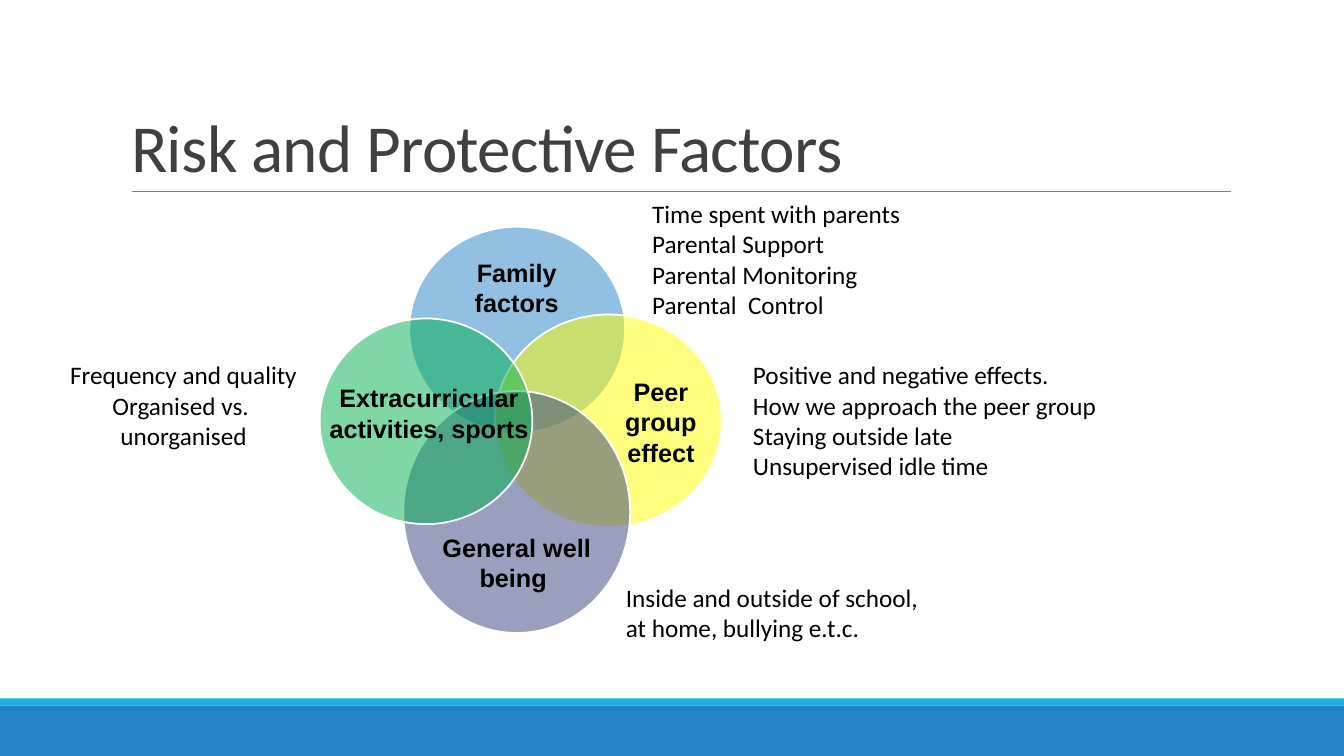
import pptx
import pptx.util
import pptx.oxml
import pptx.oxml.ns
import pptx.dml.color
import pptx.enum.shapes
import pptx.enum.text

Inches = pptx.util.Inches
Pt = pptx.util.Pt
RGBColor = pptx.dml.color.RGBColor
MSO_SHAPE = pptx.enum.shapes.MSO_SHAPE
ANCHOR = pptx.enum.text.MSO_ANCHOR
ALIGN = pptx.enum.text.PP_ALIGN

BLUE = RGBColor(0x26, 0x83, 0xC6)
CYAN = RGBColor(0x1C, 0xAD, 0xE4)
YELLOW = RGBColor(0xFF, 0xFF, 0x00)
INDIGO = RGBColor(0x34, 0x40, 0x7C)
GREEN = RGBColor(0x00, 0xB0, 0x50)
GREY = RGBColor(0x80, 0x80, 0x80)
DARK = RGBColor(0x40, 0x40, 0x40)
BLACK = RGBColor(0, 0, 0)
WHITE = RGBColor(0xFF, 0xFF, 0xFF)

CIRCLES = [
    ((0.89, 0, 2.14, 2.04), BLUE, (1.13, 0.28, 1.65, 0.65), "Family\nfactors"),
    ((1.74, 0.87, 2.25, 2.11), YELLOW, (2.95, 1.12, 0.87, 1.63), "Peer group effect"),
    ((0.83, 1.63, 2.25, 2.4), INDIGO, (1.09, 2.95, 1.73, 0.76), "General well being "),
    ((0, 0.91, 2.11, 2.04), GREEN, (-0.18, 1.49, 2.53, 0.71),
     "Extracurricular\nactivities, sports"),
]
NOTES = [
    ((6.37, 1.92, 3.83, 1.31), ALIGN.LEFT,
     "Time spent with parents\nParental Support\nParental Monitoring\nParental  Control"),
    ((7.37, 3.52, 3.93, 1.31), ALIGN.LEFT,
     "Positive and negative effects.\nHow we approach the peer group\n"
     "Staying outside late\nUnsupervised idle time"),
    ((6.11, 5.73, 3.17, 0.71), ALIGN.LEFT,
     "Inside and outside of school, at home, bullying e.t.c."),
    ((0.28, 3.52, 3.08, 1.01), ALIGN.CENTER,
     "Frequency and quality\nOrganised vs. \nunorganised"),
]


def write(frame, text, size=18, font="Calibri", color=BLACK, bold=False,
          align=ALIGN.LEFT, anchor=ANCHOR.TOP, margins=(0.1, 0.05),
          line_spacing=1.0, tracking=0):
    """Fill a text frame with one paragraph per line of text."""
    frame.word_wrap = True
    frame.auto_size = pptx.enum.text.MSO_AUTO_SIZE.NONE
    frame.vertical_anchor = anchor
    frame.margin_left = frame.margin_right = Inches(margins[0])
    frame.margin_top = frame.margin_bottom = Inches(margins[1])
    frame.text = text
    for paragraph in frame.paragraphs:
        paragraph.alignment = align
        paragraph.line_spacing = line_spacing
        for run in paragraph.runs:
            run.font.size = Pt(size)
            run.font.name = font
            run.font.bold = bold
            run.font.color.rgb = color
            if tracking:
                run._r.get_or_add_rPr().set("spc", str(int(tracking * 100)))


def add_text(slide, box, text, **text_format):
    """Place a text box in the given box."""
    textbox = slide.shapes.add_textbox(*map(Inches, box))
    write(textbox.text_frame, text, **text_format)


def add_filled(slide, preset, box, color):
    """Place a plain filled shape in the given box."""
    shape = slide.shapes.add_shape(preset, *map(Inches, box))
    shape.shadow.inherit = False
    shape.fill.solid()
    shape.fill.fore_color.rgb = color
    shape.line.fill.background()
    return shape


def add_footer_bands(slide, left, top, width, height):
    """Draw the thin band above the thick band."""
    thin = 0.07
    add_filled(slide, MSO_SHAPE.RECTANGLE, (left, top + thin, width, height - thin), BLUE)
    add_filled(slide, MSO_SHAPE.RECTANGLE, (left, top, width, thin), CYAN)


def add_heading(slide, left, top, width, height):
    """Set the title and the rule under it."""
    title = slide.shapes.title
    title.left, title.top, title.width, title.height = map(
        Inches, (left, top, width, height))
    write(title.text_frame, "Risk and Protective Factors", size=48, color=DARK,
          anchor=ANCHOR.BOTTOM, line_spacing=0.85, tracking=-0.5)
    bottom = Inches(top + height)
    rule = slide.shapes.add_connector(
        pptx.enum.shapes.MSO_CONNECTOR.STRAIGHT,
        Inches(left + 0.11), bottom, Inches(left + width + 0.01), bottom)
    rule.line.color.rgb = GREY
    rule.line.width = Pt(0.5)
    rule._element.spPr.append(pptx.oxml.parse_xml(
        f"<a:effectLst {pptx.oxml.ns.nsdecls('a')}/>"))


def add_venn(slide, left, top):
    """Draw the four overlapping circles with their labels."""
    for (x, y, width, height), color, (label_x, label_y, *label_size), label in CIRCLES:
        circle = add_filled(slide, MSO_SHAPE.OVAL,
                            (left + x, top + y, width, height), color)
        circle.line.color.rgb = WHITE
        circle.line.width = Pt(1.25)
        fill_color = circle._element.spPr.find(".//" + pptx.oxml.ns.qn("a:srgbClr"))
        fill_color.append(pptx.oxml.parse_xml(
            f"<a:alpha {pptx.oxml.ns.nsdecls('a')} val='50000'/>"))
        add_text(slide, (left + label_x, top + label_y, *label_size), label,
                 font="Arial", bold=True, align=ALIGN.CENTER,
                 anchor=ANCHOR.MIDDLE, margins=(0, 0))


def add_notes(slide):
    """Place the explanations around the circles."""
    for box, align, text in NOTES:
        add_text(slide, box, text, align=align)


def main():
    """Build and save the slide."""
    deck = pptx.Presentation()
    deck.slide_width, deck.slide_height = Inches(13.33), Inches(7.5)
    slide = deck.slides.add_slide(deck.slide_layouts.get_by_name("Title Only"))
    add_footer_bands(slide, 0, 6.93, 13.33, 0.57)
    add_heading(slide, 1.2, 0.31, 11, 1.59)
    add_venn(slide, 3.17, 2.25)
    add_notes(slide)
    deck.save("out.pptx")


if __name__ == "__main__":
    main()
